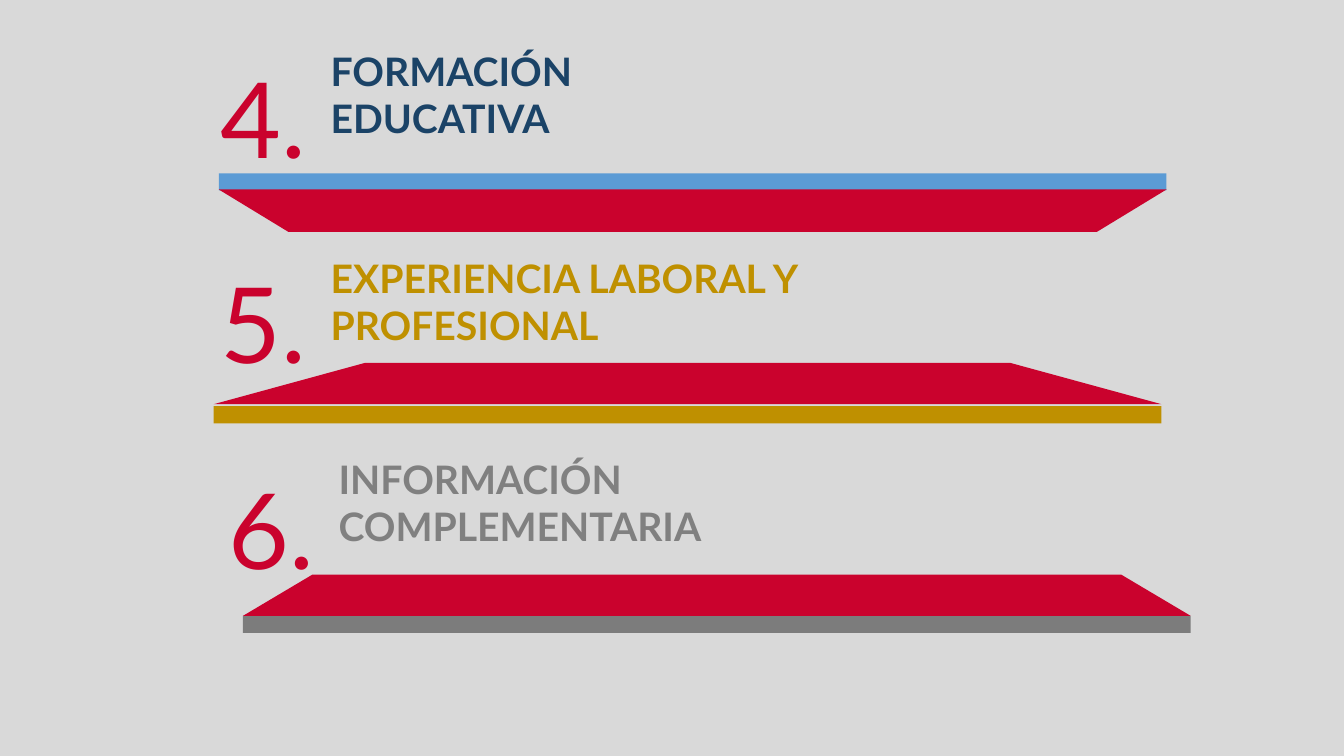
import pptx
import pptx.util
import pptx.dml.color
import pptx.enum.shapes
import pptx.enum.text
from pptx.util import Inches

RED = "CA022D"
SHELF_WIDTH = 9.4
BAR_HEIGHT = 0.17
ANCHOR = pptx.enum.text.MSO_ANCHOR
ALIGN = pptx.enum.text.PP_ALIGN


def paint(shape, color):
    """Give a shape a plain fill with no outline or shadow."""
    shape.shadow.inherit = False
    shape.fill.solid()
    shape.fill.fore_color.rgb = pptx.dml.color.RGBColor.from_string(color)
    shape.line.fill.background()


def add_text(text, left, top, width, height, *, size, color, bold=False,
             align=ALIGN.LEFT, anchor=ANCHOR.MIDDLE, wrap=True):
    box = slide.shapes.add_textbox(Inches(left), Inches(top), Inches(width), Inches(height))
    frame = box.text_frame
    frame.word_wrap = wrap
    frame.auto_size = pptx.enum.text.MSO_AUTO_SIZE.SHAPE_TO_FIT_TEXT
    frame.vertical_anchor = anchor
    para = frame.paragraphs[0]
    para.text = text
    para.alignment = align
    for span in para.runs:
        span.font.name = "Lato"
        span.font.size = pptx.util.Pt(size)
        span.font.bold = bold
        span.font.color.rgb = pptx.dml.color.RGBColor.from_string(color)


deck = pptx.Presentation()
deck.slide_width = Inches(13.33)
deck.slide_height = Inches(7.5)
slide = deck.slides.add_slide(deck.slide_layouts[6])
slide.background.fill.solid()
slide.background.fill.fore_color.rgb = pptx.dml.color.RGBColor.from_string("D9D9D9")

# Shelves: left, bar top, bar colour, panel's wide edge, narrow edge, inset of the narrow edge
shelves = [
    (2.17, 1.72, "5B9BD5", 1.88, 2.3, 0.69),
    (2.12, 4.03, "BF9000", 4.01, 3.6, 1.5),
    (2.41, 6.11, "7C7C7C", 6.11, 5.7, 0.69),
]
for left, bar_top, bar_color, wide_y, narrow_y, inset in shelves:
    bar = slide.shapes.add_shape(
        pptx.enum.shapes.MSO_SHAPE.RECTANGLE,
        Inches(left), Inches(bar_top), Inches(SHELF_WIDTH), Inches(BAR_HEIGHT))
    paint(bar, bar_color)

    right = left + SHELF_WIDTH
    outline = slide.shapes.build_freeform(Inches(left), Inches(wide_y))
    outline.add_line_segments([
        (Inches(left + inset), Inches(narrow_y)),
        (Inches(right - inset), Inches(narrow_y)),
        (Inches(right), Inches(wide_y)),
    ], close=True)
    paint(outline.convert_to_shape(), RED)

# Headings: number, its left and top, heading, heading top and width, colour
headings = [
    ("4.", 2.04, 0.48, "FORMACIÓN\vEDUCATIVA", 0.88, 4.59, "1B4367"),
    ("5.", 2.04, 2.51, "EXPERIENCIA LABORAL Y\vPROFESIONAL", 2.94, 7.29, "BF9000"),
    ("6.", 2.12, 4.55, "INFORMACIÓN\vCOMPLEMENTARIA", 4.93, 6.18, "808080"),
]
NUMBER_WIDTH = 1.14
for number, left, number_top, heading, heading_top, width, color in headings:
    add_text(number, left, number_top, NUMBER_WIDTH, 1.36, size=75, color=RED,
             align=ALIGN.CENTER, wrap=False)
    add_text(heading, left + NUMBER_WIDTH, heading_top, width, 0.57, size=28, color=color,
             bold=True, anchor=ANCHOR.BOTTOM)

deck.save("out.pptx")
